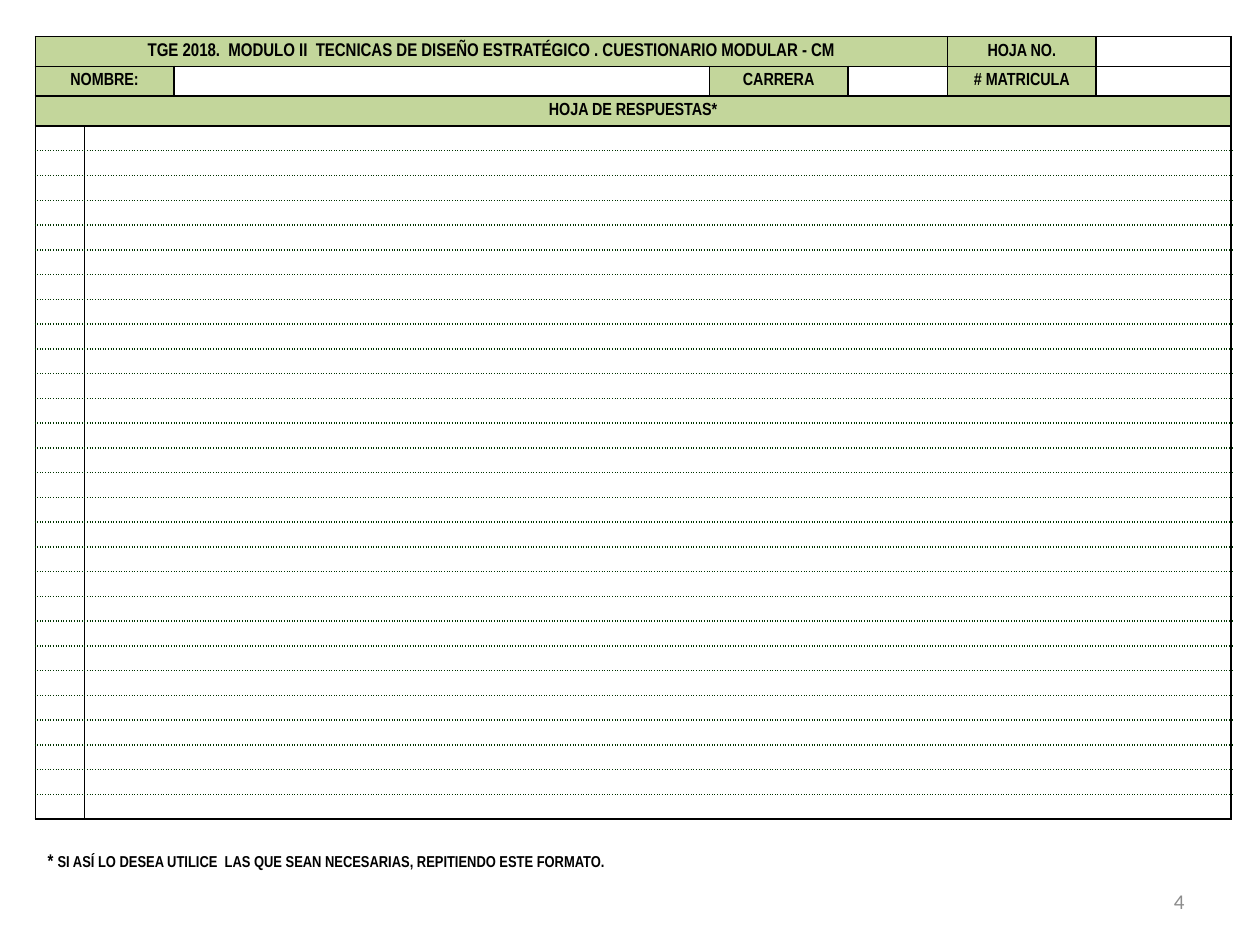
from lxml.etree import SubElement
from pptx import Presentation
from pptx.dml.color import RGBColor
from pptx.enum.text import MSO_ANCHOR, PP_ALIGN
from pptx.oxml.ns import qn
from pptx.util import Inches, Pt

BLACK, GREEN, DOTTED, WHITE, GREY = "000000", "C3D69B", "003300", "FFFFFF", "8C8C8C"
COLUMNS = [0.39, 0.71, 4.25, 1.1, 0.79, 1.18, 1.07]
HEADERS = [
    [("TGE 2018.  MODULO II  TECNICAS DE DISEÑO ESTRATÉGICO . CUESTIONARIO MODULAR - CM", 5, 10.5),
     ("HOJA NO.", 1, 10), ("", 1, 10)],
    [("NOMBRE:", 2, 10), ("", 1, 10), ("CARRERA", 1, 10), ("", 1, 10),
     ("# MATRICULA", 1, 10), ("", 1, 10)],
    [("HOJA DE RESPUESTAS*", 7, 10)],
]
ANSWER_ROWS = 28
ANSWER_ROW = [("", 1, 8), ("", 6, 8)]
NOTE = [("* ", 10.5),
        ("SI ASÍ LO DESEA UTILICE  LAS QUE SEAN NECESARIAS, REPITIENDO ESTE FORMATO.", 9)]
PAGE_NUMBER = "4"


def color(value):
    return RGBColor.from_string(value)


def style(span, size, name="Arial Narrow", ink=BLACK, bold=True):
    span.font.size = Pt(size)
    span.font.name = name
    span.font.bold = bold
    span.font.color.rgb = color(ink)


def add_border(cell, side, dotted):
    line = SubElement(cell._tc.get_or_add_tcPr(), qn(f"a:ln{side}"), w=str(Pt(1)))
    fill = SubElement(line, qn("a:solidFill"))
    SubElement(fill, qn("a:srgbClr"), val=DOTTED if dotted else BLACK)
    SubElement(line, qn("a:prstDash"), val="sysDot" if dotted else "solid")


def format_cell(cell, text, size, fill, dotted_sides):
    cell.margin_left = cell.margin_right = cell.margin_top = cell.margin_bottom = 0
    cell.vertical_anchor = MSO_ANCHOR.MIDDLE
    for side in "LRTB":
        add_border(cell, side, side in dotted_sides)
    if fill:
        cell.fill.solid()
        cell.fill.fore_color.rgb = color(fill)
    else:
        cell.fill.background()
    para = cell.text_frame.paragraphs[0]
    if text:
        para.text = text
        para.alignment = PP_ALIGN.CENTER
        para.space_before = Pt(3.6)
        style(para.runs[0], size)
    else:
        SubElement(para._p, qn("a:endParaRPr"), sz=str(size * 100))


def add_answer_sheet(page):
    rows = HEADERS + [ANSWER_ROW] * ANSWER_ROWS
    frame = page.shapes.add_table(len(rows), len(COLUMNS), Inches(0.28), Inches(0.29),
                                  Inches(sum(COLUMNS)), Inches(6.22))
    table = frame.table
    table.first_row = table.horz_banding = False
    for column, width in zip(table.columns, COLUMNS):
        column.width = Inches(width)
    first_answer, last_answer = len(HEADERS), len(rows) - 1
    for index, row in enumerate(rows):
        is_header = index < first_answer
        table.rows[index].height = (Inches(0.71) // len(HEADERS) if is_header
                                    else Inches(5.51) // ANSWER_ROWS)
        dotted_sides = ""
        if index > first_answer:
            dotted_sides += "T"
        if first_answer <= index < last_answer:
            dotted_sides += "B"
        start = 0
        for text, width, size in row:
            fill = (GREEN if text else WHITE) if is_header else None
            for offset in range(width):
                format_cell(table.cell(index, start + offset), "" if offset else text,
                            size, fill, dotted_sides)
            if width > 1:
                table.cell(index, start).merge(table.cell(index, start + width - 1))
            start += width


def add_text(page, place, spans, **look):
    box = page.shapes.add_textbox(*map(Inches, place))
    box.text_frame.word_wrap = True
    para = box.text_frame.paragraphs[0]
    for text, size in spans:
        span = para.add_run()
        span.text = text
        style(span, size, **look)
    return box


deck = Presentation()
deck.slide_width, deck.slide_height = Inches(10), Inches(7.5)
page = deck.slides.add_slide(deck.slide_layouts[6])
number = add_text(page, (7.17, 6.95, 2.33, 0.4), [(PAGE_NUMBER, 12)],
                  name="Calibri", ink=GREY, bold=False)
number.text_frame.vertical_anchor = MSO_ANCHOR.MIDDLE
number.text_frame.paragraphs[0].alignment = PP_ALIGN.RIGHT
add_answer_sheet(page)
add_text(page, (0.28, 6.69, 9.29, 0.29), NOTE)
deck.save("out.pptx")
